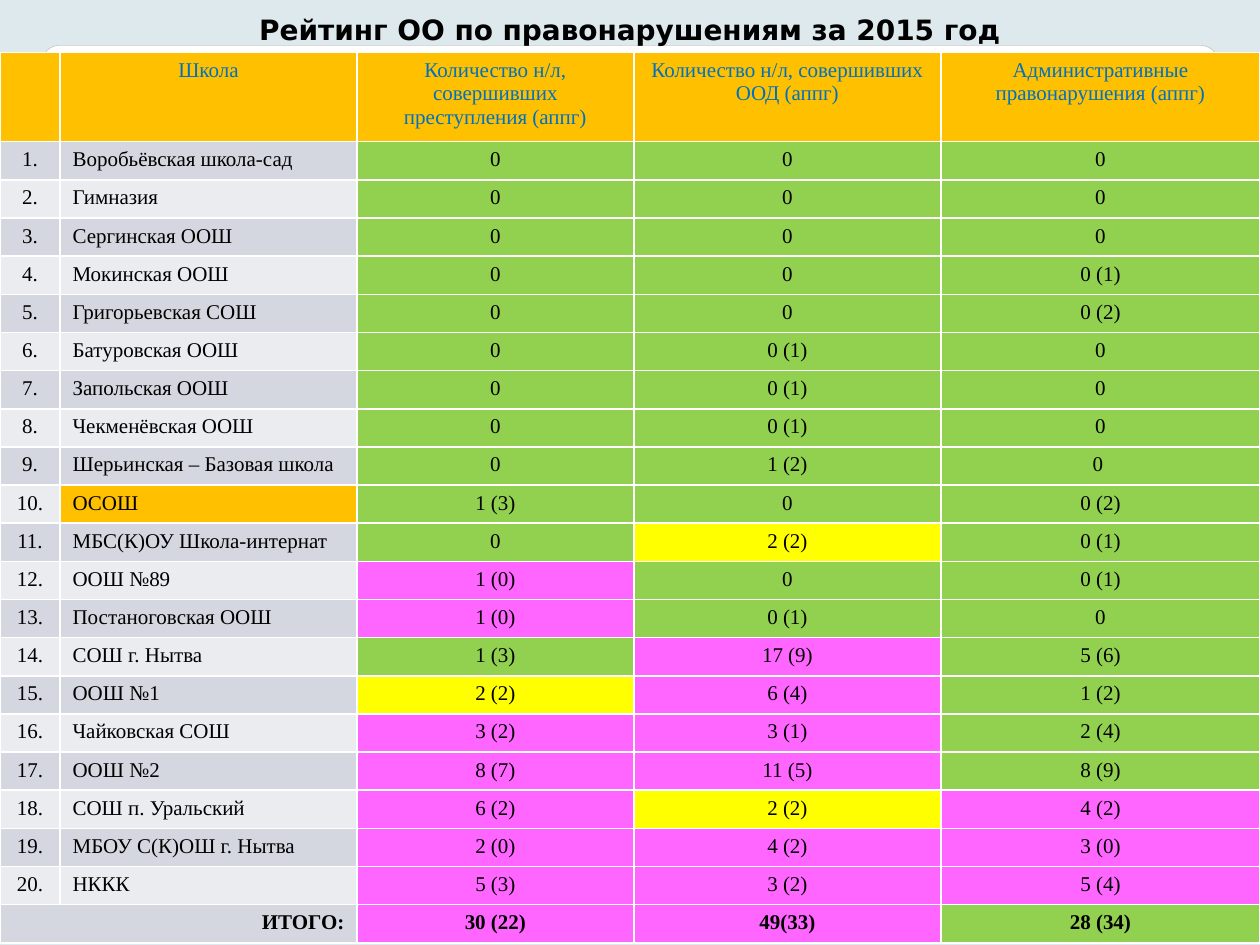
from dataclasses import dataclass

from pptx import Presentation
from pptx.dml.color import RGBColor
from pptx.enum.shapes import MSO_SHAPE
from pptx.enum.text import MSO_ANCHOR, PP_ALIGN
from pptx.util import Pt

LEFT, MID, RIGHT = PP_ALIGN.LEFT, PP_ALIGN.CENTER, PP_ALIGN.RIGHT
ROUND = MSO_SHAPE.ROUNDED_RECTANGLE
CENTER = MSO_ANCHOR.MIDDLE


@dataclass(frozen=True)
class Theme:
    """Colours, fonts and type sizes of the slide."""
    back: str = "DDE9EC"
    panel: str = "FFFFFF"
    edge: str = "A4A4A4"
    ink: str = "000000"
    blue: str = "0070C0"
    gold: str = "FFC000"
    bands: tuple = ("D5D7E0", "EBECF0")
    less: str = "92D050"
    same: str = "FFFF00"
    more: str = "FF66FF"
    head: str = "DejaVu Sans"
    body: str = "Times New Roman"
    big: int = 16
    small: int = 12


THEME = Theme()
TITLE = "Рейтинг ОО по правонарушениям за 2015 год"
HEADS = ("", "Школа", "Количество н/л, совершивших преступления (аппг)",
         "Количество н/л, совершивших ООД (аппг)",
         "Административные правонарушения (аппг)")
SCHOOLS = (
    ("Воробьёвская школа-сад", "0", "0", "0"),
    ("Гимназия", "0", "0", "0"),
    ("Сергинская ООШ", "0", "0", "0"),
    ("Мокинская ООШ", "0", "0", "0 (1)"),
    ("Григорьевская СОШ", "0", "0", "0 (2)"),
    ("Батуровская ООШ", "0", "0 (1)", "0"),
    ("Запольская ООШ", "0", "0 (1)", "0"),
    ("Чекменёвская ООШ", "0", "0 (1)", "0"),
    ("Шерьинская – Базовая школа", "0", "1 (2)", "0 "),
    ("ОСОШ", "1 (3)", "0", "0 (2)"),
    ("МБС(К)ОУ Школа-интернат", "0", "2 (2)", "0 (1)"),
    ("ООШ №89", "1 (0)", "0", "0 (1)"),
    ("Постаноговская ООШ", "1 (0)", "0 (1)", "0"),
    ("СОШ г. Нытва", "1 (3)", "17 (9)", "5 (6)"),
    ("ООШ №1", "2 (2)", "6 (4)", "1 (2)"),
    ("Чайковская СОШ", "3 (2)", "3 (1)", "2 (4)"),
    ("ООШ №2", "8 (7)", "11 (5)", "8 (9)"),
    ("СОШ п. Уральский", "6 (2)", "2 (2)", "4 (2)"),
    ("МБОУ С(К)ОШ г. Нытва", "2 (0)", "4 (2)", "3 (0)"),
    ("НККК", "5 (3)", "3 (2)", "5 (4)"),
)
TOTAL = ("ИТОГО:", "30 (22)", "49(33)", "28 (34)")
MARKED = "ОСОШ"
WIDTHS = (34.3, 169.7, 158.2, 175.6, 182.2)
TOP_ROW, ROW = 51, 21.8


def rgb(code):
    """Turn a hex code into a colour."""
    return RGBColor.from_string(code)


def write(frame, text, size=THEME.small, font=THEME.body, color=THEME.ink,
          bold=False, align=MID):
    """Put one formatted paragraph into a text frame."""
    line = frame.paragraphs[0]
    line.alignment = align
    run = line.add_run()
    run.text = text
    run.font.size = Pt(size)
    run.font.name = font
    run.font.bold = bold
    run.font.color.rgb = rgb(color)


def paint(cell, text, fill, **form):
    """Fill a table cell and write its text."""
    cell.fill.solid()
    cell.fill.fore_color.rgb = rgb(fill)
    write(cell.text_frame, text, **form)


def trend(text):
    """Pick a colour by comparing this year with the bracketed last year."""
    now, *past = [int(part) for part in text.replace(")", "").split("(")]
    if not past or now < past[0]:
        return THEME.less
    return THEME.same if now == past[0] else THEME.more


def add_title(slide, box):
    """Place the slide title in the box."""
    title = slide.shapes.title
    title.left, title.top, title.width, title.height = map(Pt, box)
    frame = title.text_frame
    frame.word_wrap = True
    frame.vertical_anchor = CENTER
    frame.margin_left = frame.margin_right = Pt(7.2)
    frame.margin_top, frame.margin_bottom = Pt(3.6), Pt(0)
    write(frame, TITLE, size=THEME.big, font=THEME.head, bold=True)


def add_panel(slide, box):
    """Place the rounded white panel behind everything else."""
    panel = slide.shapes.add_shape(ROUND, *map(Pt, box))
    panel.adjustments[0] = 0.02
    panel.shadow.inherit = False
    panel.fill.solid()
    panel.fill.fore_color.rgb = rgb(THEME.panel)
    panel.line.color.rgb = rgb(THEME.edge)
    panel.line.width = Pt(0.16)
    slide.shapes._spTree.insert(2, panel._element)


def add_rating(slide, box):
    """Place the table of schools with its header and total rows."""
    count = len(SCHOOLS) + 2
    table = slide.shapes.add_table(count, len(HEADS), *map(Pt, box)).table
    for col, width in zip(table.columns, WIDTHS):
        col.width = Pt(width)
    for num, row in enumerate(table.rows):
        row.height = Pt(ROW if num else TOP_ROW)
    for col, text in enumerate(HEADS):
        paint(table.cell(0, col), text, THEME.gold, color=THEME.blue)
    for num, (name, *marks) in enumerate(SCHOOLS, 1):
        band = THEME.bands[(num - 1) % 2]
        paint(table.cell(num, 0), f"{num}.", band)
        paint(table.cell(num, 1), name,
              THEME.gold if name == MARKED else band, align=LEFT)
        add_marks(table, num, marks)
    last = count - 1
    table.cell(last, 0).merge(table.cell(last, 1))
    label, *marks = TOTAL
    paint(table.cell(last, 0), label, THEME.bands[0], bold=True, align=RIGHT)
    add_marks(table, last, marks, bold=True)


def add_marks(table, row, marks, **form):
    """Write the counts of one row, coloured by trend."""
    for col, text in enumerate(marks, 2):
        paint(table.cell(row, col), text, trend(text), **form)


def main():
    """Build the deck and save it."""
    deck = Presentation()
    deck.slide_width, deck.slide_height = Pt(720), Pt(540)
    slide = deck.slides.add_slide(deck.slide_layouts[5])
    slide.background.fill.solid()
    slide.background.fill.fore_color.rgb = rgb(THEME.back)
    add_panel(slide, (24, 26, 672, 488))
    add_title(slide, (0, 0, 720, 30))
    add_rating(slide, (0, 30, 720, 510))
    deck.save("out.pptx")


if __name__ == "__main__":
    main()
